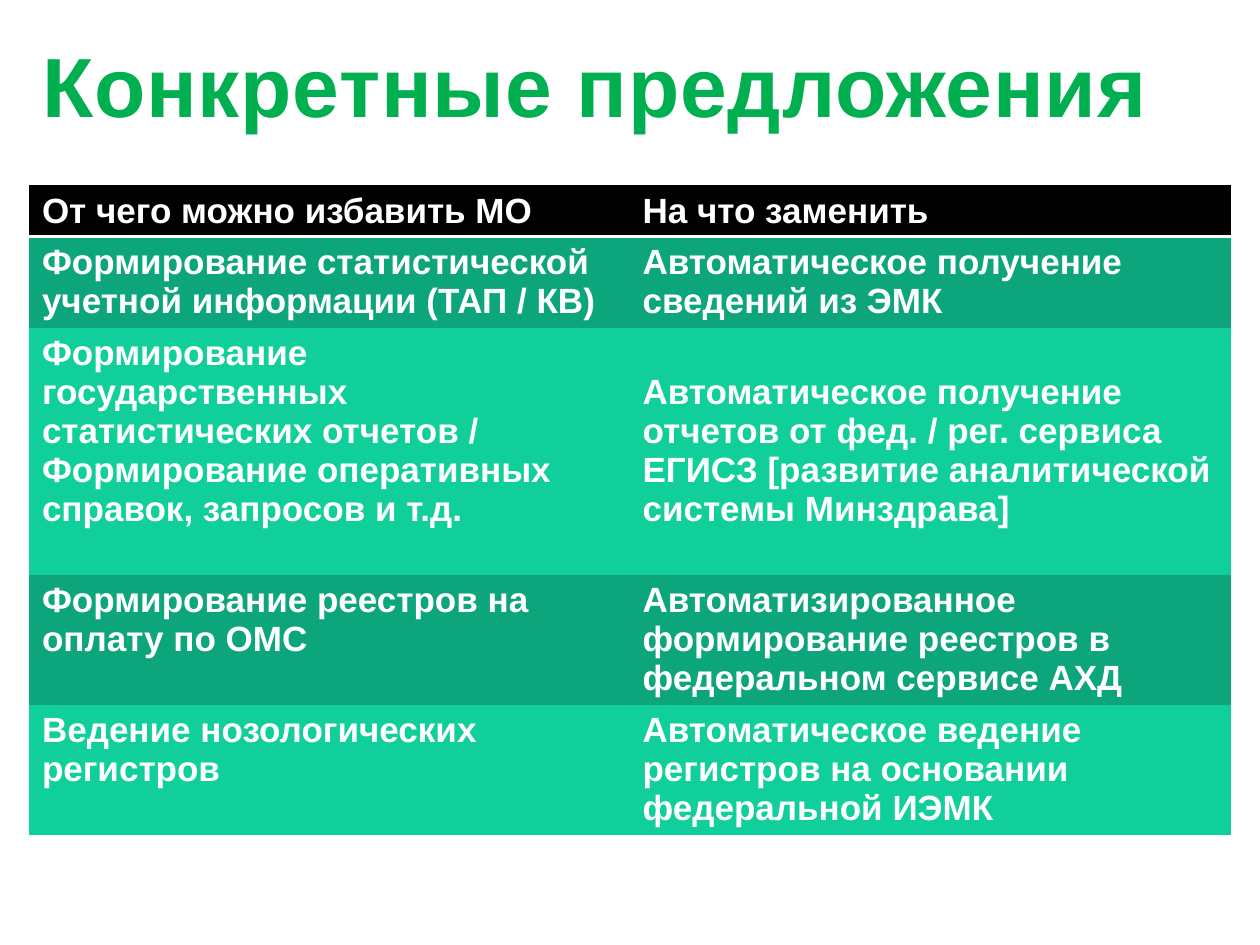
from lxml.etree import SubElement
from pptx import Presentation
from pptx.dml.color import RGBColor
from pptx.enum.text import MSO_ANCHOR, MSO_AUTO_SIZE, PP_ALIGN
from pptx.oxml import parse_xml
from pptx.oxml.ns import nsdecls, qn
from pptx.util import Pt

GREEN = RGBColor(0x00, 0xB0, 0x50)
GREY = RGBColor(0xA6, 0xA6, 0xA6)
WHITE = RGBColor(0xFF, 0xFF, 0xFF)
BLACK = RGBColor(0x00, 0x00, 0x00)
DARK = RGBColor(0x0D, 0xA6, 0x7C)
LIGHT = RGBColor(0x10, 0xCF, 0x9B)

HEAD = {"name": "Arial", "size": Pt(48), "bold": True}
BODY = {"name": "Arial", "size": Pt(20), "bold": True}

# Row height in points, then the two cells
ROWS = [
    (29.2, "От чего можно избавить МО", "На что заменить"),
    (51.6, "Формирование статистической учетной информации (ТАП / КВ)",
     "Автоматическое получение сведений из ЭМК"),
    (141.2, "Формирование государственных статистических отчетов / "
     "Формирование оперативных справок, запросов и т.д.",
     "Автоматическое получение отчетов от фед. / рег. сервиса ЕГИСЗ "
     "[развитие аналитической системы Минздрава]"),
    (74.3, "Формирование реестров на оплату по ОМС",
     "Автоматизированное формирование реестров в федеральном сервисе АХД"),
    (74.3, "Ведение нозологических регистров",
     "Автоматическое ведение регистров на основании федеральной ИЭМК"),
]


def style(font, form, color):
    for key, value in form.items():
        setattr(font, key, value)
    font.color.rgb = color


def line(tag, width, color):
    return parse_xml(
        f'<a:{tag} {nsdecls("a")} w="{Pt(width)}"><a:solidFill>'
        f'<a:srgbClr val="{color}"/></a:solidFill></a:{tag}>')


def add_title(slide, box, text):
    title = slide.shapes.title
    title.left, title.top, title.width, title.height = map(Pt, box)
    frame = title.text_frame
    frame.word_wrap = True
    frame.auto_size = MSO_AUTO_SIZE.NONE
    frame.vertical_anchor = MSO_ANCHOR.MIDDLE
    para = frame.paragraphs[0]
    para.alignment = PP_ALIGN.LEFT
    run = para.add_run()
    run.text = text
    style(run.font, HEAD, GREEN)
    # Letter spacing and thin outline
    props = run._r.get_or_add_rPr()
    props.set("spc", "50")
    props.insert(0, line("ln", 0.9, GREY))


def fill_cell(cell, text, color):
    cell.fill.solid()
    cell.fill.fore_color.rgb = color
    cell.text = text
    style(cell.text_frame.paragraphs[0].runs[0].font, BODY, WHITE)


def add_grid(slide, box, rows):
    left, top, width = map(Pt, box)
    height = Pt(sum(row[0] for row in rows))
    table = slide.shapes.add_table(
        len(rows), 2, left, top, width, height).table
    # Plain style without grid lines
    style_id = table._tbl.tblPr.find(qn("a:tableStyleId"))
    style_id.text = "{2D5ABB26-0587-4C30-8999-92F81FD0307C}"
    for r, (high, *texts) in enumerate(rows):
        table.rows[r].height = Pt(high)
        color = BLACK if r == 0 else DARK if r % 2 else LIGHT
        for c, text in enumerate(texts):
            fill_cell(table.cell(r, c), text, color)
    # White rule under the header
    for cell in table.rows[0].cells:
        cell._tc.get_or_add_tcPr().insert(0, line("lnB", 2, WHITE))
    table.cell(2, 1).vertical_anchor = MSO_ANCHOR.MIDDLE


def main():
    deck = Presentation()
    deck.slide_width, deck.slide_height = Pt(720), Pt(540)
    slide = deck.slides.add_slide(deck.slide_layouts[5])
    add_title(slide, (16.8, 11.6, 686.4, 73.2), "Конкретные предложения")
    add_grid(slide, (16.8, 105.8, 686.4), ROWS)
    deck.save("out.pptx")


if __name__ == "__main__":
    main()
